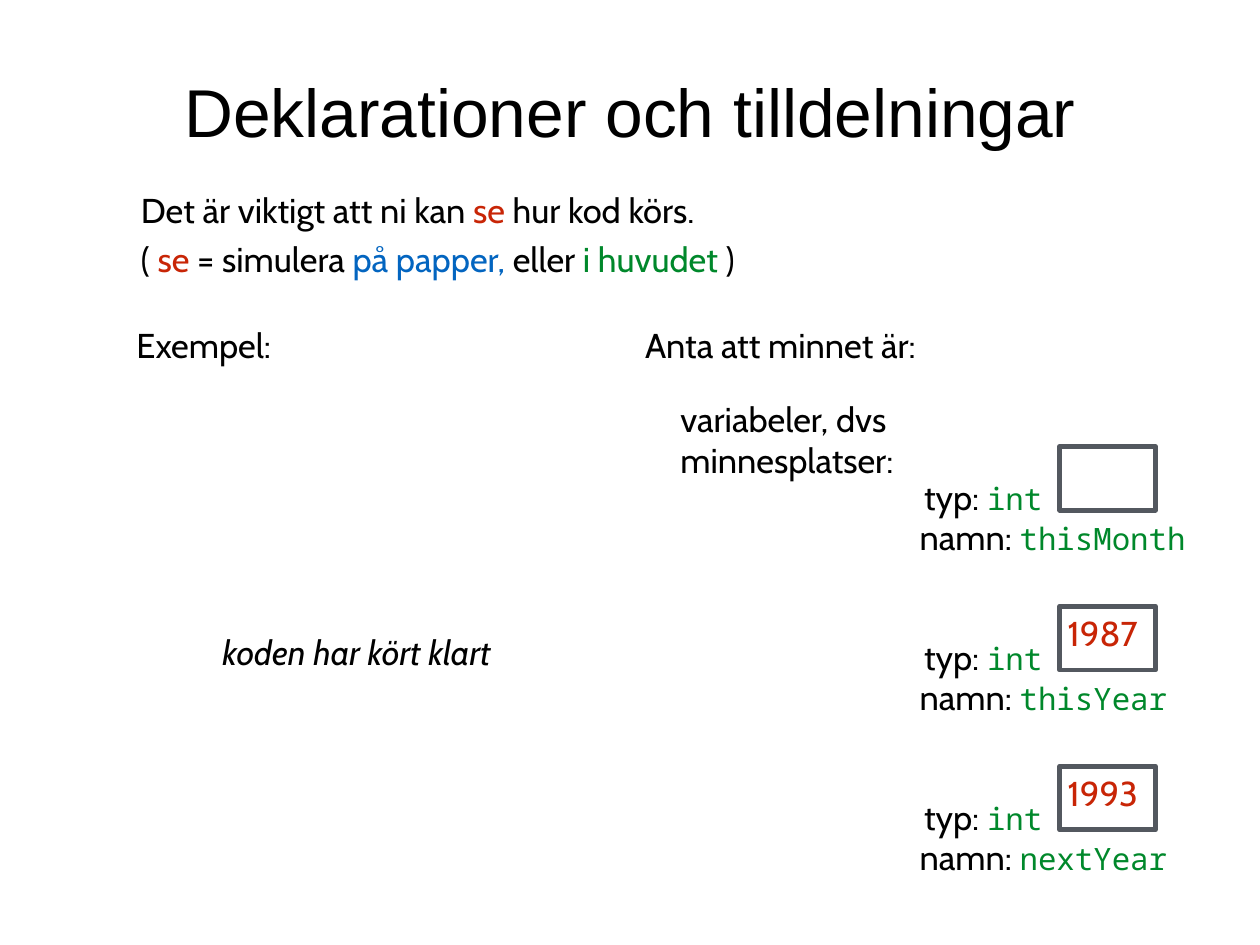
from pptx import Presentation
from pptx import util as u
from pptx.dml.color import RGBColor
from pptx.enum import shapes, text

CELL = 0.1  # inches per grid cell
COLS, ROWS = 142.2, 106.7
COLORS = {"black": "000000", "red": "C82506", "blue": "0365C0",
          "green": "00882B", "frame": "53585F"}
BODY, CODE = ("Cabin", 28), ("Noto Sans Mono", 25)

TITLE = "Deklarationer och tilldelningar"
# (column, row, width, height), paragraphs of (text, colour) runs
NOTES = [
    ((15.9, 21.3, 99.4, 5.7), [[("Det är viktigt att ni kan ", "black"),
                                ("se", "red"), (" hur kod körs.", "black")]]),
    ((15.9, 26.9, 99.4, 5.7), [[("( ", "black"), ("se", "red"),
                                (" = simulera ", "black"),
                                ("på papper,", "blue"), (" eller ", "black"),
                                ("i huvudet", "green"), (" )", "black")]]),
    ((15.4, 36.6, 41.5, 5.6), [[("Exempel:", "black")]]),
    ((72.8, 36.6, 60, 5.6), [[("Anta att minnet är:", "black")]]),
    ((76.8, 44.9, 35.3, 10), [[("variabeler, dvs", "black")],
                              [("minnesplatser:", "black")]]),
]
STATUS = (25.1, 71.3, 41.5, 5.4), [[("koden har kört klart", "black")]]
VARIABLES = [("int", "thisMonth", None), ("int", "thisYear", "1987"),
             ("int", "nextYear", "1993")]
MEMORY_LEFT, MEMORY_TOP, MEMORY_STEP = 103.8, 50.4, 18.05


def cells(*counts):
    return [u.Inches(n * CELL) for n in counts]


def rgb(name):
    return RGBColor.from_string(COLORS[name])


def add_text(slide, box, paragraphs, font=BODY, italic=None,
             align=text.PP_ALIGN.LEFT, anchor=text.MSO_ANCHOR.TOP):
    """Runs are (text, colour) or (text, colour, (font, size))."""
    tf = slide.shapes.add_textbox(*cells(*box)).text_frame
    tf.word_wrap = True
    tf.vertical_anchor = anchor
    tf.margin_left = tf.margin_right = tf.margin_top = tf.margin_bottom = 0
    for i, runs in enumerate(paragraphs):
        p = tf.paragraphs[0] if i == 0 else tf.add_paragraph()
        p.alignment = align
        p.font.name, p.font.size, p.font.italic = font[0], u.Pt(font[1]), italic
        for words, color, *own_font in runs:
            r = p.add_run()
            r.text = words
            r.font.color.rgb = rgb(color)
            name, size = own_font[0] if own_font else font
            r.font.name, r.font.size = name, u.Pt(size)


def add_variable(slide, top, kind, name, value):
    """Draw one memory cell with its type, name and value."""
    left = MEMORY_LEFT
    sp = slide.shapes.add_shape(shapes.MSO_SHAPE.RECTANGLE,
                                *cells(left + 15.8, top, 10.8, 7.2))
    sp.shadow.inherit = False
    sp.fill.background()
    sp.line.color.rgb = rgb("frame")
    sp.line.width = u.Pt(4)
    for label, word, dx, dy, width in (("namn: ", name, 0, 7.9, 33.7),
                                       ("typ: ", kind, 0.5, 3.4, 15)):
        add_text(slide, (left + dx, top + dy, width, 5.6),
                 [[(label, "black"), (word, "green", CODE)]])
    if value:
        add_text(slide, (left + 16.7, top + 0.7, 9.2, 5.6), [[(value, "red")]])


def main():
    prs = Presentation()
    prs.slide_width, prs.slide_height = cells(COLS, ROWS)
    s = prs.slides.add_slide(prs.slide_layouts[6])
    add_text(s, (0.7, 0.7, COLS - 1.4, 23.6), [[(TITLE, "black")]],
             font=("Arial", 55), align=text.PP_ALIGN.CENTER,
             anchor=text.MSO_ANCHOR.MIDDLE)
    for box, paragraphs in NOTES:
        add_text(s, box, paragraphs)
    for i, variable in enumerate(VARIABLES):
        add_variable(s, MEMORY_TOP + i * MEMORY_STEP, *variable)
    add_text(s, *STATUS, italic=True)
    prs.save("out.pptx")


if __name__ == "__main__":
    main()
